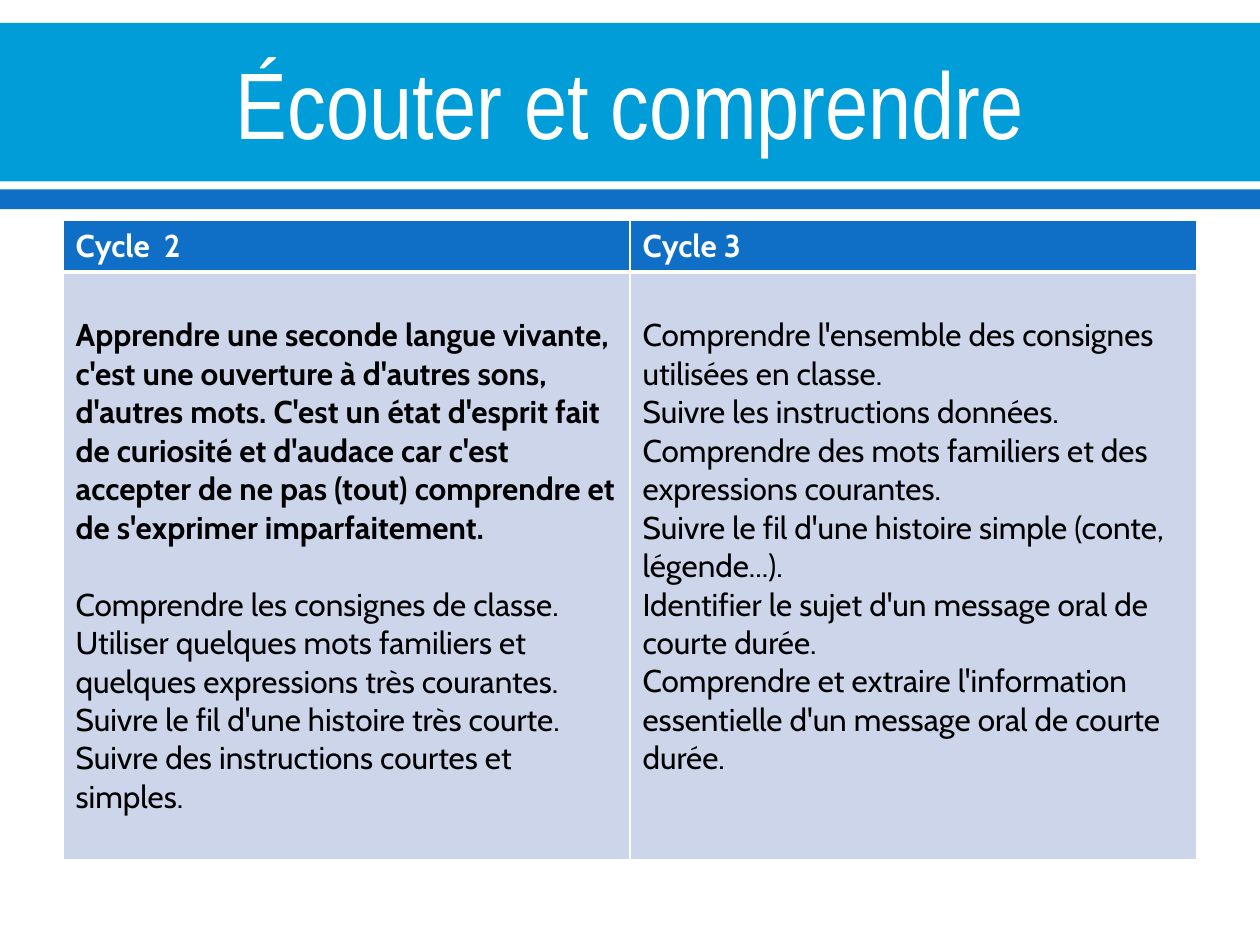
from dataclasses import dataclass

from lxml import etree
from pptx import Presentation
from pptx.dml.color import RGBColor
from pptx.enum.shapes import MSO_SHAPE
from pptx.enum.text import MSO_ANCHOR, PP_ALIGN
from pptx.oxml.ns import qn
from pptx.util import Cm, Pt

RECTANGLE = MSO_SHAPE.RECTANGLE
MIDDLE = MSO_ANCHOR.MIDDLE
CENTER, LEFT = PP_ALIGN.CENTER, PP_ALIGN.LEFT
TITLE_ONLY = 5


@dataclass(frozen=True)
class Theme:
    white: str = "FFFFFF"
    black: str = "000000"
    banner: str = "009DD9"
    accent: str = "0F6FC6"
    body: str = "CCD5EA"
    title_font: str = "Arial Narrow"
    text_font: str = "Cabin"
    title_size: int = 54
    text_size: int = 18
    thin_rule: int = 1
    thick_rule: int = 3


THEME = Theme()

TITLE = "Écouter et comprendre"
# Each cycle: heading, introduction (may be empty), skills
CYCLES = [
    ("Cycle  2",
     "Apprendre une seconde langue vivante, c'est une ouverture à d'autres "
     "sons, d'autres mots. C'est un état d'esprit fait de curiosité et "
     "d'audace car c'est accepter de ne pas (tout) comprendre et de "
     "s'exprimer imparfaitement.",
     ["Comprendre les consignes de classe.",
      "Utiliser quelques mots familiers et quelques expressions très courantes.",
      "Suivre le fil d'une histoire très courte.",
      "Suivre des instructions courtes et simples."]),
    ("Cycle 3",
     "",
     ["Comprendre l'ensemble des consignes utilisées en classe.",
      "Suivre les instructions données.",
      "Comprendre des mots familiers et des expressions courantes.",
      "Suivre le fil d'une histoire simple (conte, légende...).",
      "Identifier le sujet d'un message oral de courte durée.",
      "Comprendre et extraire l'information essentielle d'un message oral "
      "de courte durée."]),
]


def format_paragraph(paragraph, font_name, size, color, bold=False, align=LEFT):
    paragraph.alignment = align
    for run in paragraph.runs:
        run.font.name = font_name
        run.font.size = Pt(size)
        run.font.bold = bold
        run.font.color.rgb = RGBColor.from_string(color)


def add_band(slide, left, top, width, height, color):
    band = slide.shapes.add_shape(RECTANGLE, left, top, width, height)
    band.shadow.inherit = False
    band.fill.solid()
    band.fill.fore_color.rgb = RGBColor.from_string(color)
    band.line.fill.background()


def add_banner(slide, left, top, width, height):
    """Title on a wide band, underlined by a thin band."""
    title_band_height, stripe_height = Cm(3.2), Cm(0.4)
    add_band(slide, left, top, width, title_band_height, THEME.banner)
    add_band(slide, left, top + height - stripe_height, width, stripe_height,
             THEME.accent)

    title = slide.shapes.title
    side = Cm(1.27)
    title.left, title.top = left + side, top + Cm(0.05)
    title.width, title.height = width - 2 * side, title_band_height - Cm(0.1)
    title.text_frame.text = TITLE
    title.text_frame.vertical_anchor = MIDDLE
    format_paragraph(title.text_frame.paragraphs[0], THEME.title_font,
                     THEME.title_size, THEME.white, align=CENTER)
    # Bring the title in front of the bands
    title.element.getparent().append(title.element)


def style_cell(cell, color, top_rule, bottom_rule):
    cell.fill.solid()
    cell.fill.fore_color.rgb = RGBColor.from_string(color)
    properties = cell._tc.get_or_add_tcPr()
    rules = {"lnL": THEME.thin_rule, "lnR": THEME.thin_rule,
             "lnT": top_rule, "lnB": bottom_rule}
    for position, (side, weight) in enumerate(rules.items()):
        border = etree.Element(qn(f"a:{side}"), w=str(Pt(weight)))
        fill = etree.SubElement(border, qn("a:solidFill"))
        etree.SubElement(fill, qn("a:srgbClr"), val=THEME.white)
        properties.insert(position, border)


def fill_heading(cell, heading):
    cell.text_frame.text = heading
    format_paragraph(cell.text_frame.paragraphs[0], THEME.text_font,
                     THEME.text_size, THEME.white, bold=True)
    style_cell(cell, THEME.accent, THEME.thin_rule, THEME.thick_rule)


def fill_skills(cell, introduction, skills):
    cell.margin_top = Cm(0.9)
    lines = ([introduction] if introduction else []) + skills
    cell.text_frame.text = "\n".join(lines)
    for paragraph in cell.text_frame.paragraphs:
        format_paragraph(paragraph, THEME.text_font, THEME.text_size,
                         THEME.black, bold=paragraph.text == introduction)
    if introduction:
        cell.text_frame.paragraphs[0].space_after = Pt(22)
    style_cell(cell, THEME.body, THEME.thick_rule, THEME.thin_rule)


def add_cycle_table(slide, left, top, width, height):
    """One column per cycle: heading above its skills."""
    table = slide.shapes.add_table(2, len(CYCLES), left, top, width, height).table
    heading_height = Cm(1.03)
    table.rows[0].height = heading_height
    table.rows[1].height = height - heading_height
    for column, (heading, introduction, skills) in enumerate(CYCLES):
        table.columns[column].width = width // len(CYCLES)
        fill_heading(table.cell(0, column), heading)
        fill_skills(table.cell(1, column), introduction, skills)


def main():
    presentation = Presentation()
    presentation.slide_width, presentation.slide_height = Cm(25.4), Cm(19.05)
    slide = presentation.slides.add_slide(presentation.slide_layouts[TITLE_ONLY])
    add_banner(slide, 0, Cm(0.46), presentation.slide_width, Cm(3.76))
    add_cycle_table(slide, Cm(1.27), Cm(4.45), Cm(22.86), Cm(12.89))
    presentation.save("out.pptx")


if __name__ == "__main__":
    main()
